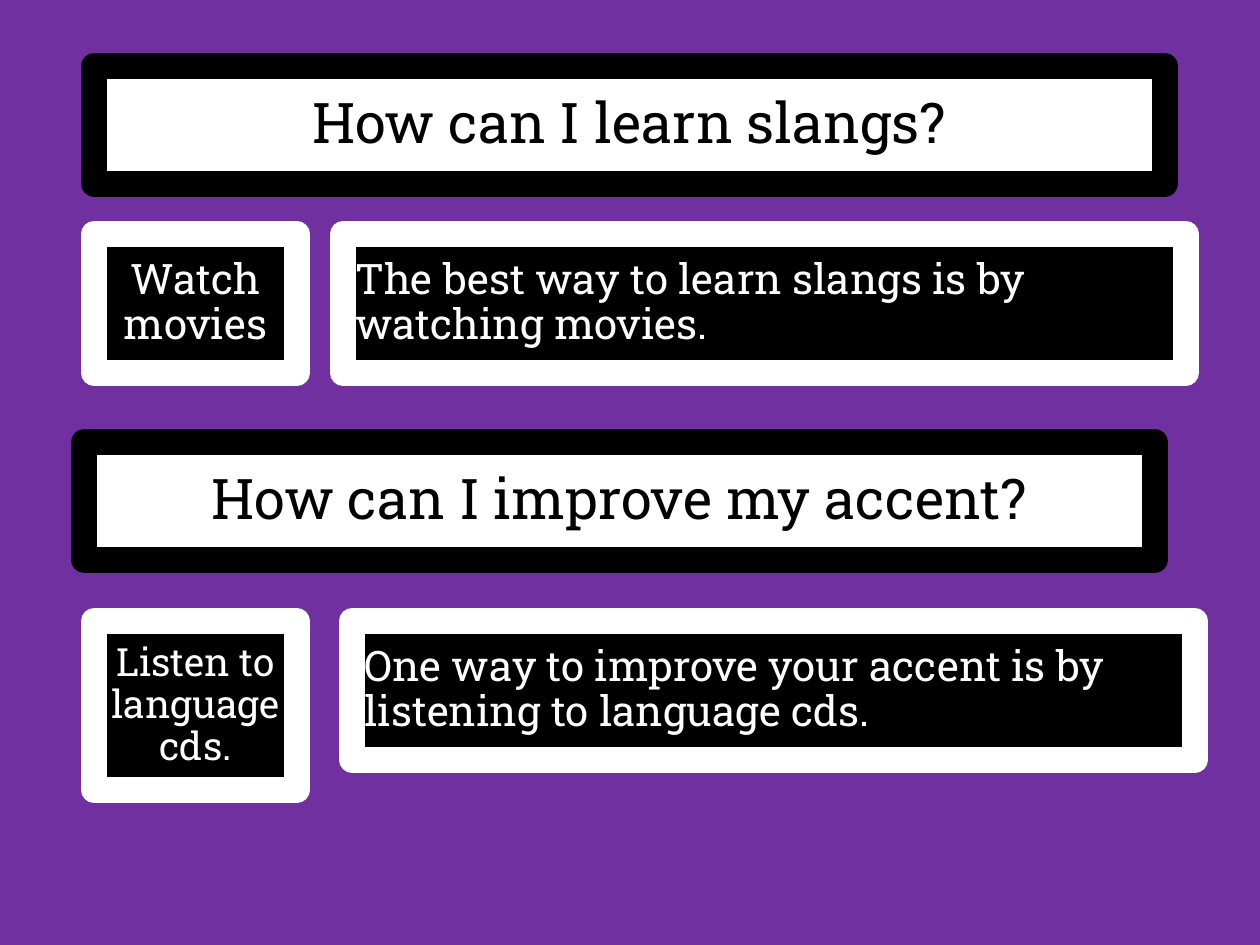
from dataclasses import dataclass

from lxml.etree import SubElement
from pptx import Presentation
from pptx.dml.color import RGBColor
from pptx.enum.shapes import MSO_SHAPE
from pptx.enum.text import MSO_ANCHOR, MSO_AUTO_SIZE, PP_ALIGN
from pptx.oxml.ns import qn
from pptx.util import Emu, Pt


@dataclass(frozen=True)
class Theme:
    background: RGBColor = RGBColor(0x70, 0x30, 0xA0)
    black: RGBColor = RGBColor(0, 0, 0)
    white: RGBColor = RGBColor(0xFF, 0xFF, 0xFF)
    font: str = "Roboto Slab"
    question_size: float = 32
    answer_size: float = 24
    compact_size: float = 22.2
    border: float = 14.5
    line_spacing: float = 0.9


THEME = Theme()
EMU_PER_PX = 914400 / 126


def px(length):
    return Emu(round(length * EMU_PER_PX))


def style_box(shape, box, text, size, fill, ink, alignment=PP_ALIGN.CENTER):
    """Place a box, frame it in its ink colour and write its text."""
    shape.left, shape.top, shape.width, shape.height = map(px, box)
    shape.shadow.inherit = False
    shape.fill.solid()
    shape.fill.fore_color.rgb = fill
    shape.line.color.rgb = ink
    shape.line.width = Pt(THEME.border)
    SubElement(shape.line._get_or_add_ln(), qn("a:round"))

    frame = shape.text_frame
    frame.word_wrap = True
    frame.auto_size = MSO_AUTO_SIZE.NONE
    frame.vertical_anchor = MSO_ANCHOR.MIDDLE
    paragraph = frame.paragraphs[0]
    paragraph.alignment = alignment
    paragraph.line_spacing = THEME.line_spacing
    run = paragraph.add_run()
    run.text = text
    run.font.name = THEME.font
    run.font.size = Pt(size)
    run.font.color.rgb = ink


presentation = Presentation()
presentation.slide_width = px(1260)
presentation.slide_height = px(945)
slide = presentation.slides.add_slide(presentation.slide_layouts[5])
slide.background.fill.solid()
slide.background.fill.fore_color.rgb = THEME.background

# Question: left, top, text
questions = [
    (94, 66, "How can I learn slangs?"),
    (84, 442, "How can I improve my accent?"),
]
for index, (left, top, text) in enumerate(questions):
    if index == 0:
        shape = slide.shapes.title
    else:
        shape = slide.shapes.add_shape(MSO_SHAPE.RECTANGLE, 0, 0, 0, 0)
    style_box(shape, (left, top, 1071, 118), text,
              THEME.question_size, THEME.white, THEME.black)

# Answer: top, tip height, tip size, tip, detail left, detail
answers = [
    (234, 139, THEME.answer_size, "Watch movies",
     343, "The best way to learn slangs is by watching movies."),
    (621, 169, THEME.compact_size, "Listen to language cds.",
     352, "One way to improve your accent is by listening to language cds."),
]
for top, tip_height, tip_size, tip, detail_left, detail in answers:
    boxes = [
        ((94, top, 203, tip_height), tip, tip_size, PP_ALIGN.CENTER),
        ((detail_left, top, 843, 139), detail, THEME.answer_size, PP_ALIGN.LEFT),
    ]
    for box, text, size, alignment in boxes:
        shape = slide.shapes.add_shape(MSO_SHAPE.RECTANGLE, 0, 0, 0, 0)
        style_box(shape, box, text, size, THEME.black, THEME.white, alignment)

presentation.save("out.pptx")
